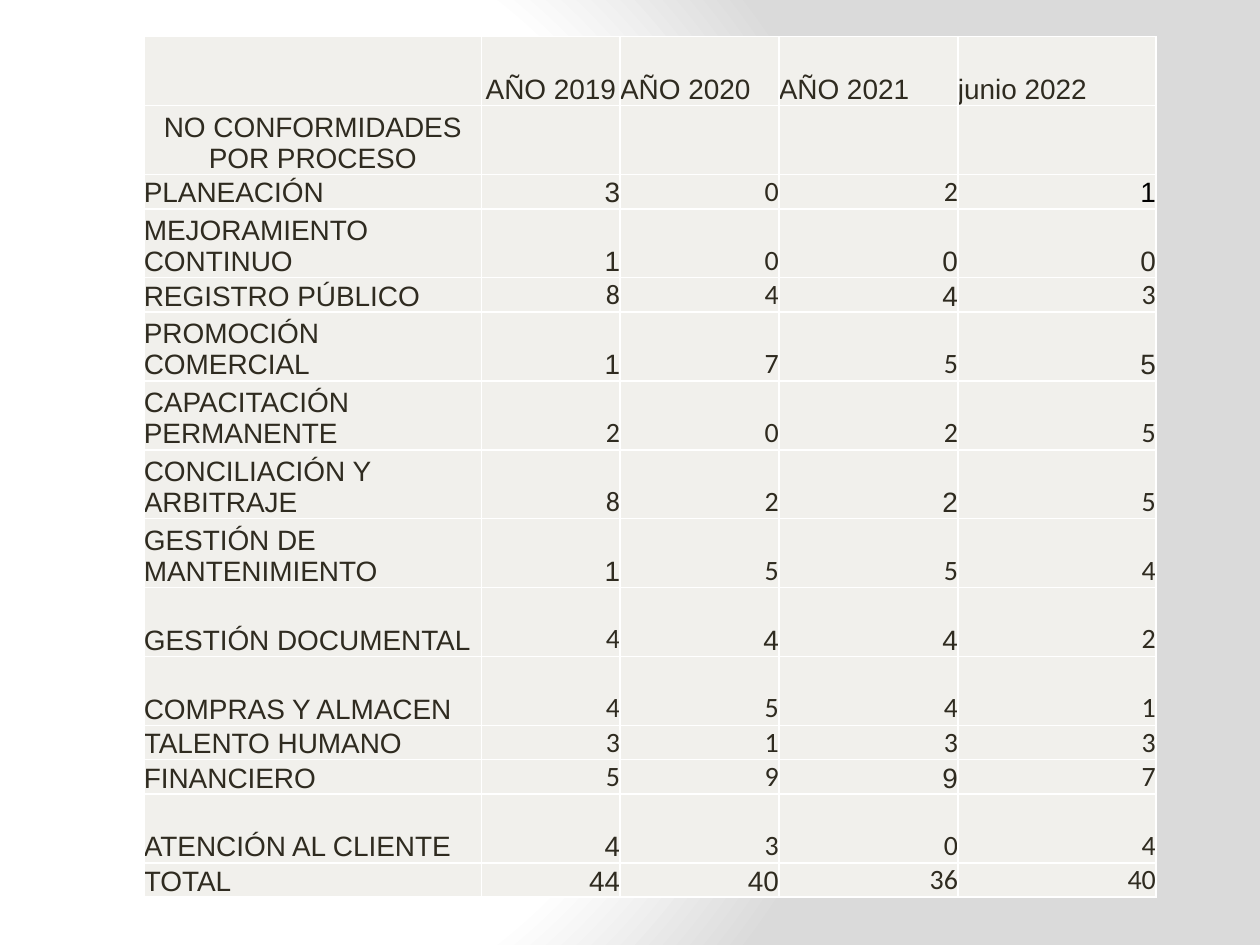
from dataclasses import dataclass

from lxml.etree import SubElement
from pptx import Presentation
from pptx.dml.color import RGBColor
from pptx.enum.text import MSO_ANCHOR, PP_ALIGN
from pptx.oxml import parse_xml
from pptx.oxml.ns import nsdecls, qn
from pptx.util import Cm, Pt


@dataclass(frozen=True)
class Theme:
    text: str = "2F2B20"
    black: str = "000000"
    cell: str = "F1F0EC"
    border: str = "FFFFFF"
    backdrop: tuple = ((0, "FFFFFF"), (75, "FFFFFF"), (100, "DADADA"))
    size: int = 16
    border_width: int = 1
    fonts: tuple = (("A", "Arial"), ("C", "Calibri"))


COLUMN_WIDTHS = (6.81, 2.79, 3.2, 3.61, 3.99)
TALL_ROW, SHORT_ROW = 1.39, 0.69
LONGEST_SHORT_LABEL = 16

YEARS = ("AÑO 2019", "AÑO 2020", "AÑO 2021", "junio 2022")
SECTION = "NO CONFORMIDADES POR PROCESO"
# Process, values by year, and the font initial of each value
PROCESSES = (
    ("PLANEACIÓN", (3, 0, 2, 1), "ACCA"),
    ("MEJORAMIENTO CONTINUO", (1, 0, 0, 0), "ACAA"),
    ("REGISTRO PÚBLICO", (8, 4, 4, 3), "CCAC"),
    ("PROMOCIÓN COMERCIAL", (1, 7, 5, 5), "ACCA"),
    ("CAPACITACIÓN PERMANENTE", (2, 0, 2, 5), "CCCC"),
    ("CONCILIACIÓN Y ARBITRAJE", (8, 2, 2, 5), "CCAC"),
    ("GESTIÓN DE MANTENIMIENTO", (1, 5, 5, 4), "ACCC"),
    ("GESTIÓN DOCUMENTAL", (4, 4, 4, 2), "CAAC"),
    ("COMPRAS Y ALMACEN", (4, 5, 4, 1), "CCCC"),
    ("TALENTO HUMANO", (3, 1, 3, 3), "CCCC"),
    ("FINANCIERO", (5, 9, 9, 7), "CCAC"),
    ("ATENCIÓN AL CLIENTE", (4, 3, 0, 4), "ACCC"),
    ("TOTAL", (44, 40, 36, 40), "AACC"),
)


class SlideBuilder:
    def __init__(self, slide, theme):
        self.slide = slide
        self.theme = theme
        self.fonts = dict(theme.fonts)

    def radial_background(self):
        self.slide.background.fill.solid()
        properties = self.slide.element.find(".//" + qn("p:bgPr"))
        stops = "".join(
            f'<a:gs pos="{position * 1000}"><a:srgbClr val="{color}"/></a:gs>'
            for position, color in self.theme.backdrop
        )
        gradient = parse_xml(
            f'<a:gradFill {nsdecls("a")} rotWithShape="1"><a:gsLst>{stops}</a:gsLst>'
            '<a:path path="circle">'
            '<a:fillToRect l="20000" t="50000" r="100000" b="50000"/>'
            "</a:path></a:gradFill>"
        )
        properties.replace(properties.find(qn("a:solidFill")), gradient)

    def table(self, left, top, widths, heights):
        """Add an empty table with every cell filled and bordered."""
        frame = self.slide.shapes.add_table(
            len(heights), len(widths), Cm(left), Cm(top), Cm(sum(widths)), Cm(sum(heights))
        )
        table = frame.table
        table.first_row = table.horz_banding = False
        for column, width in zip(table.columns, widths):
            column.width = Cm(width)
        for row, height in zip(table.rows, heights):
            row.height = Cm(height)
        for cell in table.iter_cells():
            self.style_cell(cell)
        for properties in frame.element.iter(qn("a:tcPr")):
            self.border_cell(properties)
        return table

    def style_cell(self, cell):
        cell.margin_left = cell.margin_right = cell.margin_top = cell.margin_bottom = 0
        cell.vertical_anchor = MSO_ANCHOR.BOTTOM
        cell.fill.solid()
        cell.fill.fore_color.rgb = RGBColor.from_string(self.theme.cell)

    def border_cell(self, properties):
        for index, side in enumerate(("lnL", "lnR", "lnT", "lnB")):
            line = properties.makeelement(
                qn(f"a:{side}"), {"w": str(Pt(self.theme.border_width))}
            )
            solid = SubElement(line, qn("a:solidFill"))
            SubElement(solid, qn("a:srgbClr"), val=self.theme.border)
            properties.insert(index, line)

    def cell_text(self, cell, text, alignment=PP_ALIGN.LEFT, font="A", color=None):
        paragraph = cell.text_frame.paragraphs[0]
        paragraph.alignment = alignment
        run = paragraph.add_run()
        run.text = str(text)
        run.font.name = self.fonts[font]
        run.font.size = Pt(self.theme.size)
        run.font.color.rgb = RGBColor.from_string(color or self.theme.text)


def row_height(label):
    return SHORT_ROW if 0 < len(label) <= LONGEST_SHORT_LABEL else TALL_ROW


def main():
    presentation = Presentation()
    presentation.slide_width, presentation.slide_height = Cm(25.4), Cm(19.05)
    slide = presentation.slides.add_slide(presentation.slide_layouts[6])
    theme = Theme()
    builder = SlideBuilder(slide, theme)
    builder.radial_background()

    labels = ["", SECTION] + [process for process, _, _ in PROCESSES]
    table = builder.table(2.9, 0.74, COLUMN_WIDTHS, [row_height(label) for label in labels])

    for column, year in enumerate(YEARS, start=1):
        alignment = PP_ALIGN.CENTER if column == 1 else PP_ALIGN.LEFT
        builder.cell_text(table.cell(0, column), year, alignment)
    builder.cell_text(table.cell(1, 0), SECTION, PP_ALIGN.CENTER)

    for row, (process, values, fonts) in enumerate(PROCESSES, start=2):
        builder.cell_text(table.cell(row, 0), process)
        for column, (value, font) in enumerate(zip(values, fonts), start=1):
            is_latest_planning = process == "PLANEACIÓN" and column == len(YEARS)
            color = theme.black if is_latest_planning else theme.text
            builder.cell_text(table.cell(row, column), value, PP_ALIGN.RIGHT, font, color)

    presentation.save("out.pptx")


if __name__ == "__main__":
    main()
